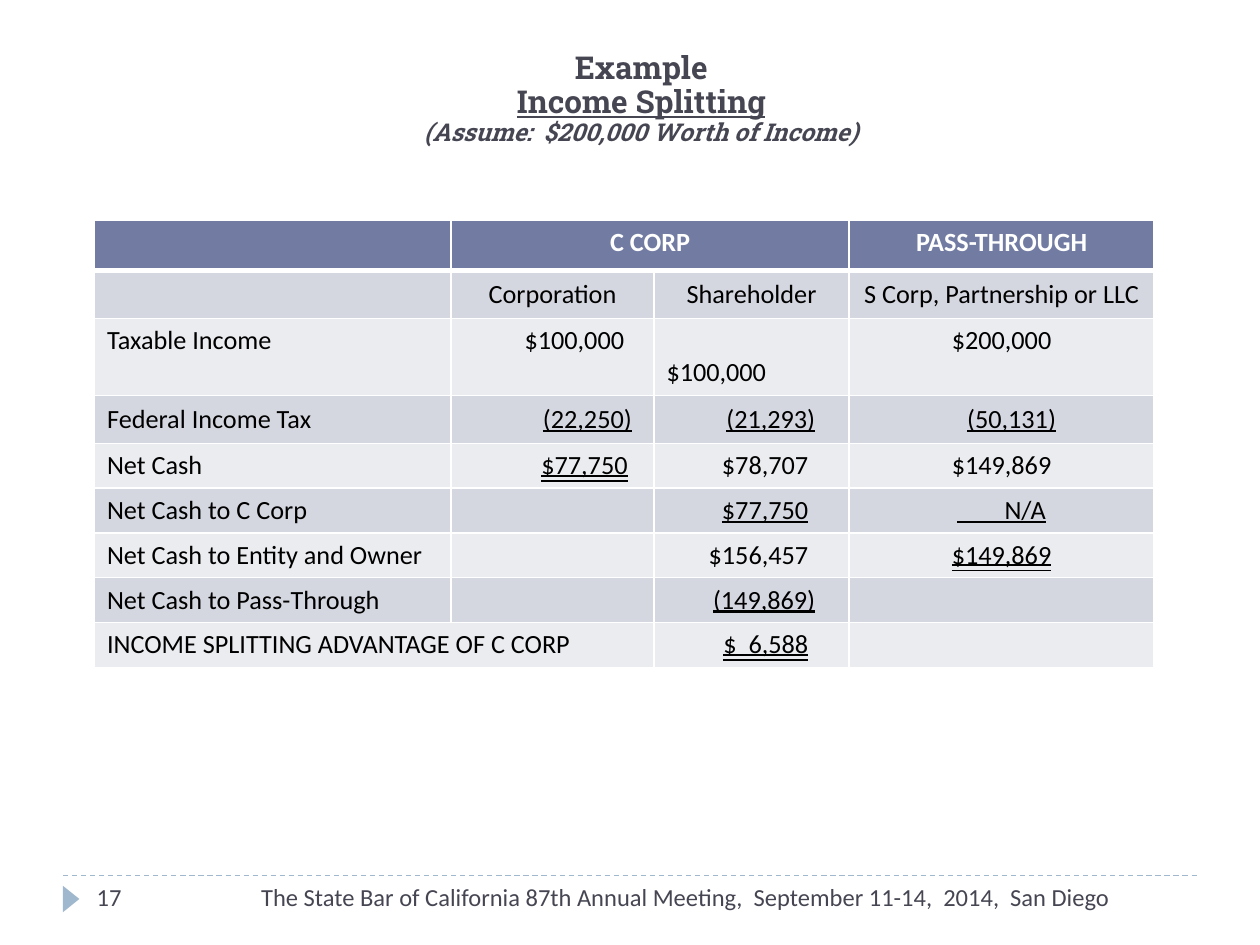
"""Build the income splitting example slide."""
import pptx
import pptx.dml.color
import pptx.enum.dml
import pptx.enum.shapes
import pptx.enum.text
import pptx.oxml
import pptx.oxml.ns
import pptx.util

Pt = pptx.util.Pt
ALIGN = pptx.enum.text.PP_ALIGN
ANCHOR = pptx.enum.text.MSO_ANCHOR
UNDERLINE = pptx.enum.text.MSO_UNDERLINE
SINGLE, DOUBLE = UNDERLINE.SINGLE_LINE, UNDERLINE.DOUBLE_LINE
COLORS = {"ink": "464653", "accent": "9FB8CD", "header": "727CA3", "band": "D5D7E0",
          "light": "EBECF0", "white": "FFFFFF", "black": "000000"}
COLUMNS = [203.8, 115.9, 111.6, 174.2]
ROWS = [28.6, 27.4, 44, 27.4] + [25.6] * 5
EMPTY = ("",)


def rgb(name):
    """Return the named colour."""
    return pptx.dml.color.RGBColor.from_string(COLORS[name])


def left(text):
    """Describe a left-aligned cell."""
    return text, ALIGN.LEFT, 7.2, None


def center(text, underline=None):
    """Describe a centred cell."""
    return text, ALIGN.CENTER, 7.2, underline


def right(text, margin, underline=None):
    """Describe a right-aligned cell with its right margin."""
    return text, ALIGN.RIGHT, margin, underline


CELLS = [
    [EMPTY, center("C CORP"), EMPTY, center("PASS-THROUGH")],
    [EMPTY, center("Corporation"), center("Shareholder"), center("S Corp, Partnership or LLC")],
    [left("Taxable Income"), right("$100,000", 17), left("$100,000"), center("$200,000")],
    [left("Federal Income Tax"), right("(22,250)", 12.6, SINGLE), right("(21,293)", 19.4, SINGLE),
     right("(50,131)", 56, SINGLE)],
    [left("Net Cash"), right("$77,750", 15, DOUBLE), right("$78,707", 23.4), center("$149,869")],
    [left("Net Cash to C Corp"), EMPTY, right("$77,750", 23.4, SINGLE),
     center("        N/A", SINGLE)],
    [left("Net Cash to Entity and Owner"), EMPTY, right("$156,457", 23.4),
     center("$149,869", DOUBLE)],
    [left("Net Cash to Pass-Through"), EMPTY, right("(149,869)", 19.4, SINGLE), EMPTY],
    [left("INCOME SPLITTING ADVANTAGE OF C CORP"), EMPTY, right("$  6,588", 23.4, DOUBLE), EMPTY],
]


def add_run(p, text, size, color, font="Calibri", bold=False, italic=False, underline=None):
    """Add one formatted run to a paragraph."""
    r = p.add_run()
    r.text = text
    r.font.name, r.font.size = font, Pt(size)
    r.font.bold, r.font.italic, r.font.underline = bold, italic, underline
    r.font.color.rgb = rgb(color)


def set_title(s):
    """Place and fill the title placeholder."""
    sp = s.shapes.title
    sp.left, sp.top, sp.width, sp.height = Pt(36.7), Pt(23.8), Pt(659.5), Pt(66.2)
    tf = sp.text_frame
    tf.word_wrap, tf.auto_size = True, pptx.enum.text.MSO_AUTO_SIZE.NONE
    tf.vertical_anchor = ANCHOR.MIDDLE
    lines = [("Example", 18, False, None), ("Income Splitting", 18, False, SINGLE),
             ("(Assume:  $200,000 Worth of Income)", 14, True, None)]
    for i, (text, size, italic, underline) in enumerate(lines):
        p = tf.add_paragraph() if i else tf.paragraphs[0]
        p.alignment, p.line_spacing = ALIGN.CENTER, 0.9
        p.space_before = Pt(0)
        add_run(p, text, size, "ink", "Roboto Slab", True, italic, underline)


def add_text(s, text, x, width, align):
    """Add a footer text box."""
    tf = s.shapes.add_textbox(Pt(x), Pt(500.4), Pt(width), Pt(28.8)).text_frame
    tf.word_wrap = True
    p = tf.paragraphs[0]
    p.alignment = align
    add_run(p, text, 14, "ink")


def add_footer_marks(s):
    """Add the dashed rule and the triangle marker."""
    rule = s.shapes.add_connector(pptx.enum.shapes.MSO_CONNECTOR.STRAIGHT,
                                  Pt(36), Pt(500.4), Pt(684), Pt(500.4))
    rule.line.color.rgb, rule.line.width = rgb("accent"), Pt(0.75)
    rule.line.dash_style = pptx.enum.dml.MSO_LINE.DASH
    pptx.oxml.ns.qn("a:effectLst")
    rule.element.spPr.append(pptx.oxml.parse_xml(
        f'<a:effectLst {pptx.oxml.ns.nsdecls("a")}/>'))
    sp = s.shapes.add_shape(pptx.enum.shapes.MSO_SHAPE.ISOSCELES_TRIANGLE,
                            Pt(33.1), Pt(509), Pt(15.1), Pt(9.4))
    sp.rotation, sp.shadow.inherit = 90, False
    sp.fill.solid()
    sp.fill.fore_color.rgb = rgb("accent")
    sp.line.fill.background()


def set_borders(cell, top, bottom):
    """Draw white borders around a cell."""
    tc_pr = cell._tc.get_or_add_tcPr()
    for i, (side, width) in enumerate([("L", 1), ("R", 1), ("T", top), ("B", bottom)]):
        tc_pr.insert(i, pptx.oxml.parse_xml(
            f'<a:ln{side} {pptx.oxml.ns.nsdecls("a")} w="{Pt(width)}"><a:solidFill>'
            f'<a:srgbClr val="{COLORS["white"]}"/></a:solidFill></a:ln{side}>'))


def fill_cell(cell, row, text, align=None, margin=7.2, underline=None):
    """Format one cell and write its text."""
    cell.fill.solid()
    cell.fill.fore_color.rgb = rgb("header" if row == 0 else "band" if row % 2 else "light")
    set_borders(cell, 3 if row == 1 else 1, 3 if row == 0 else 1)
    cell.margin_right = Pt(margin)
    cell.vertical_anchor = ANCHOR.TOP if row in (0, 2) else ANCHOR.MIDDLE
    p = cell.text_frame.paragraphs[0]
    p.alignment = align
    if text:
        add_run(p, text, 15, "black" if row else "white", bold=row == 0, underline=underline)
    else:
        p.font.size = Pt(15)


def add_income_table(s):
    """Add the comparison table."""
    table = s.shapes.add_table(len(ROWS), len(COLUMNS), Pt(54), Pt(126),
                               Pt(sum(COLUMNS)), Pt(sum(ROWS))).table
    for column, width in zip(table.columns, COLUMNS):
        column.width = Pt(width)
    for row, height in zip(table.rows, ROWS):
        row.height = Pt(height)
    for i, cells in enumerate(CELLS):
        for j, cell in enumerate(cells):
            fill_cell(table.cell(i, j), i, *cell)
    table.cell(2, 2).vertical_anchor = ANCHOR.BOTTOM
    table.cell(0, 1).merge(table.cell(0, 2))
    table.cell(8, 0).merge(table.cell(8, 1))


def main():
    """Build and save the slide."""
    prs = pptx.Presentation()
    prs.slide_width, prs.slide_height = Pt(720), Pt(540)
    s = prs.slides.add_slide(prs.slide_layouts[5])
    add_footer_marks(s)
    add_text(s, "The State Bar of California 87th Annual Meeting,  September 11-14,  2014,  San Diego",
             113.8, 527.8, ALIGN.RIGHT)
    add_text(s, "17", 48.2, 60, ALIGN.LEFT)
    set_title(s)
    add_income_table(s)
    prs.save("out.pptx")


if __name__ == "__main__":
    main()
